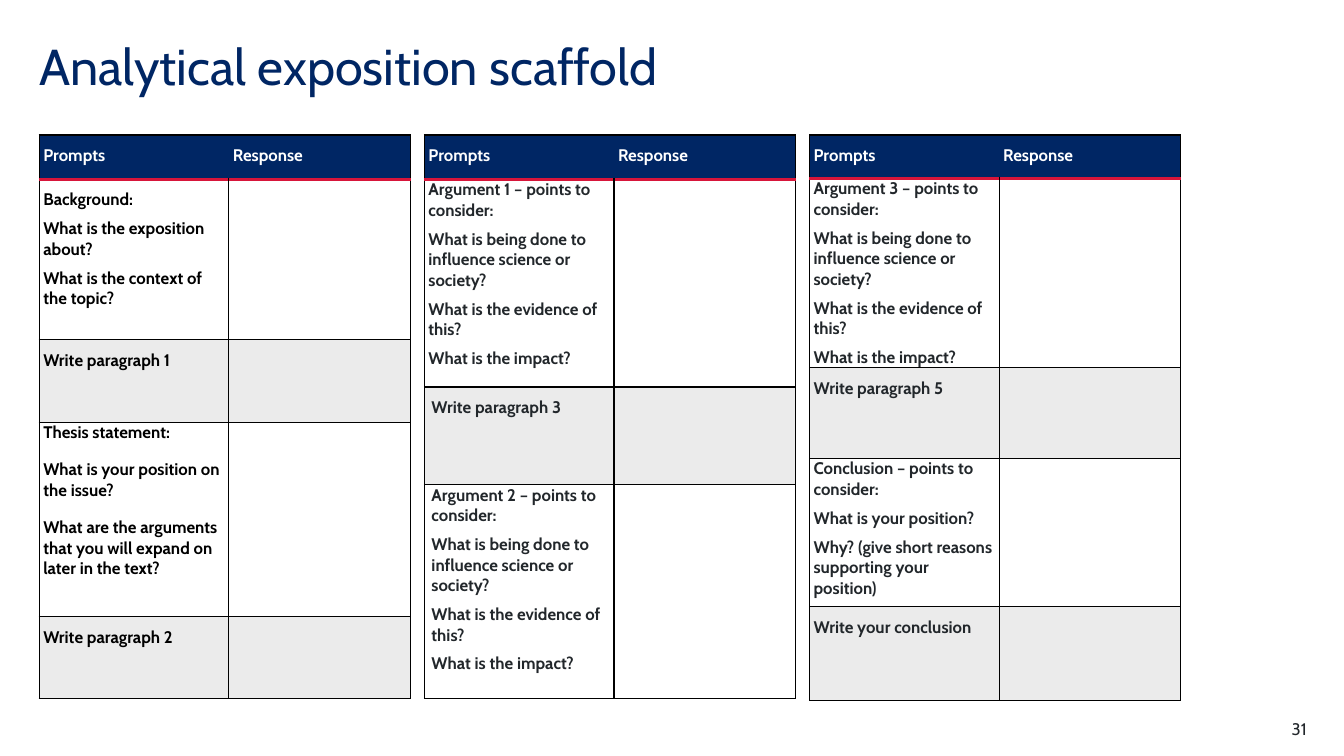
from pptx import Presentation
from pptx.util import Inches, Pt
from pptx.dml.color import RGBColor
from pptx.enum.text import PP_ALIGN as AL, MSO_ANCHOR as ANCHOR
from pptx.oxml import parse_xml
from pptx.oxml.ns import nsdecls

FONT = "Cabin"
NAVY, RED, GREY, INK = "002664", "D7153A", "EBEBEB", "22272B"
WHITE, BLACK = "FFFFFF", "000000"
THIN, THICK = (BLACK, 1), (RED, 3)

ARGUMENT = ["What is being done to influence science or society?",
            "What is the evidence of this?", "What is the impact?"]


def row(height, *lines, first=1, before=6, inset=0.04):
    """One prompt row; first is the line spacing of its first paragraph."""
    return dict(height=height, lines=lines, first=first, before=before, inset=inset)


def write(height, text, inset=0.04):
    """One row that asks for writing, shaded grey."""
    return dict(row(height, text, first=1.5, inset=inset), fill=GREY)


# Each table: text colour, header height, body rows
TABLES = [
    (BLACK, 0.44, [
        row(1.59, "Background:", "What is the exposition about?",
            "What is the context of the topic?", first=1.5),
        write(0.82, "Write paragraph 1"),
        row(1.93, "Thesis statement:", "What is your position on the issue?",
            "What are the arguments that you will expand on later in the text?",
            before=12),
        write(0.81, "Write paragraph 2")]),
    (INK, 0.44, [
        row(2.06, "Argument 1 – points to consider:", *ARGUMENT),
        write(0.97, "Write paragraph 3", inset=0.07),
        row(2.12, "Argument 2 – points to consider:", *ARGUMENT, inset=0.07)]),
    (INK, 0.43, [
        row(1.78, "Argument 3 – points to consider:", *ARGUMENT),
        write(0.9, "Write paragraph 5"),
        row(1.47, "Conclusion – points to consider:", "What is your position?",
            "Why? (give short reasons supporting your position)"),
        write(0.93, "Write your conclusion")]),
]


def rgb(value):
    return RGBColor.from_string(value)


def style(font, size, color, bold=False):
    for name, value in dict(name=FONT, size=Pt(size), bold=bold).items():
        setattr(font, name, value)
    font.color.rgb = rgb(color)


def no_margins(tf, anchor):
    values = dict(margin_left=0, margin_right=0, margin_top=0, margin_bottom=0,
                  word_wrap=True, vertical_anchor=anchor)
    for name, value in values.items():
        setattr(tf, name, value)


def set_borders(cell, left, right, top, bottom):
    """Draw the four edges; None leaves an edge without a line."""
    tcPr = cell._tc.get_or_add_tcPr()
    edges = zip(("lnL", "lnR", "lnT", "lnB"), (left, right, top, bottom))
    for i, (tag, line) in enumerate(edges):
        color, width = line or (None, 0)
        paint = (f'<a:solidFill><a:srgbClr val="{color}"/></a:solidFill>'
                 if line else "<a:noFill/>")
        tcPr.insert(i, parse_xml(
            f'<a:{tag} {nsdecls("a")} w="{Pt(width)}">{paint}</a:{tag}>'))


def fill_cell(cell, lines, color, fill, first, before, inset):
    values = dict(margin_left=Inches(inset), margin_right=Inches(inset),
                  margin_top=0, margin_bottom=0, vertical_anchor=ANCHOR.TOP)
    for name, value in values.items():
        setattr(cell, name, value)
    cell.fill.solid()
    cell.fill.fore_color.rgb = rgb(fill)
    tf = cell.text_frame
    for i, line in enumerate(lines):
        p = tf.add_paragraph() if i else tf.paragraphs[0]
        if i:
            p.space_before = Pt(before)
        else:
            p.line_spacing = first
        r = p.add_run()
        r.text = line
        style(r.font, 12, color, bold=True)


def add_title(s, x, y, w, h):
    sp = s.shapes.title
    sp.left, sp.top, sp.width, sp.height = map(Inches, (x, y, w, h))
    no_margins(sp.text_frame, ANCHOR.MIDDLE)
    p = sp.text_frame.paragraphs[0]
    p.alignment, p.line_spacing = AL.LEFT, 0.9
    r = p.add_run()
    r.text = "Analytical exposition scaffold"
    style(r.font, 36, NAVY)


def add_scaffold(s, x, y, widths, color, head, rows):
    height = head + sum(item["height"] for item in rows)
    tbl = s.shapes.add_table(len(rows) + 1, 2, Inches(x), Inches(y),
                             Inches(sum(widths)), Inches(height)).table
    tbl.first_row = tbl.horz_banding = False
    for col, width in zip(tbl.columns, widths):
        col.width = Inches(width)

    # Header row
    tbl.rows[0].height = Inches(head)
    for c, text in enumerate(("Prompts", "Response")):
        cell = tbl.cell(0, c)
        fill_cell(cell, [text], WHITE, NAVY, 1.5, 0, 0.04)
        set_borders(cell, None if c else THIN, THIN if c else None, THIN, THICK)

    # Prompts on the left, room to answer on the right
    for i, item in enumerate(rows, 1):
        tbl.rows[i].height = Inches(item["height"])
        for c, lines in enumerate((item["lines"], [])):
            cell = tbl.cell(i, c)
            fill_cell(cell, lines, color, item.get("fill", WHITE),
                      item["first"], item["before"], item["inset"])
            set_borders(cell, THIN, THIN, THICK if i == 1 else THIN, THIN)


def add_page_number(s, x, y, w, h):
    tf = s.shapes.add_textbox(*map(Inches, (x, y, w, h))).text_frame
    no_margins(tf, ANCHOR.TOP)
    p = tf.paragraphs[0]
    p.alignment = AL.RIGHT
    r = p.add_run()
    r.text = "31"
    style(r.font, 12, INK)


def main():
    prs = Presentation()
    prs.slide_width, prs.slide_height = Inches(13.33), Inches(7.5)
    s = prs.slides.add_slide(prs.slide_layouts[5])
    left, step = 0.39, 3.82
    add_title(s, left, 0.39, 11.02, 0.6)
    for i, table in enumerate(TABLES):
        add_scaffold(s, left + i * step, 1.34, (1.88, 1.8), *table)
    add_page_number(s, 12.17, 7.13, 0.79, 0.2)
    prs.save("out.pptx")


if __name__ == "__main__":
    main()
